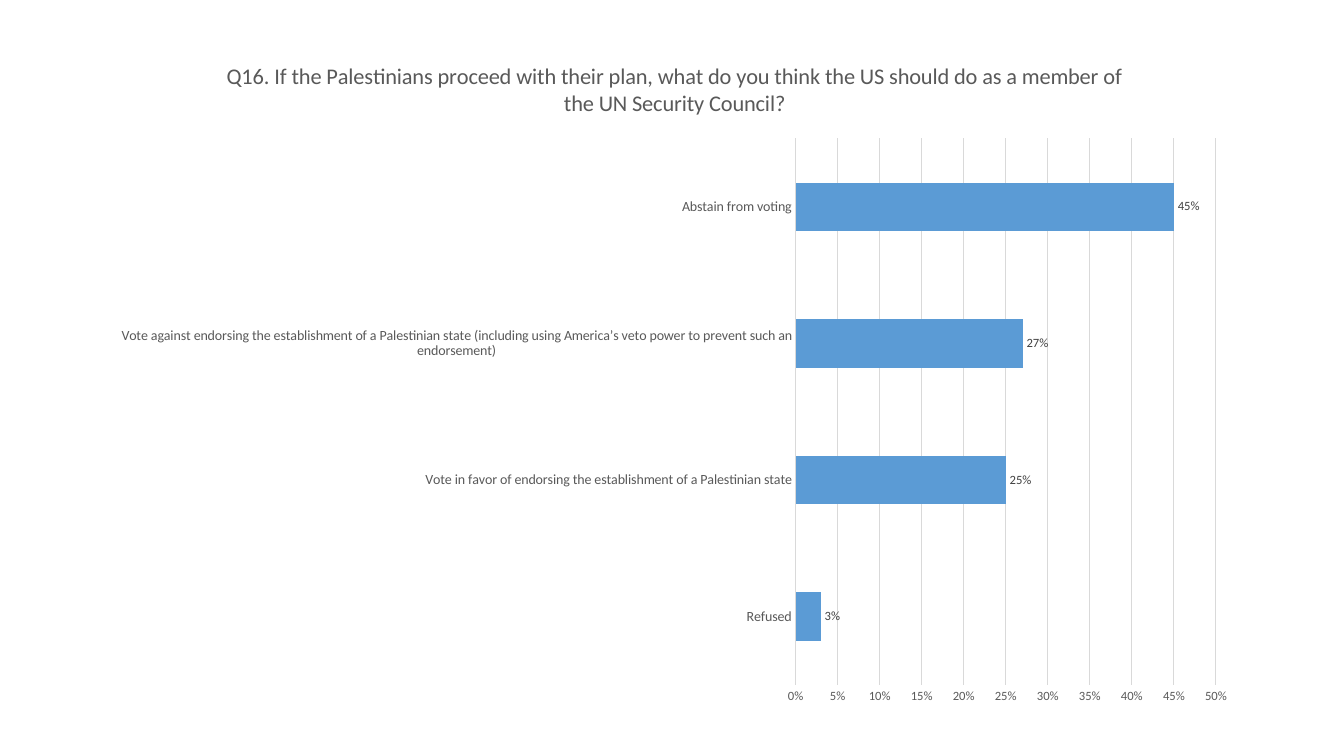
from dataclasses import dataclass

from lxml.etree import SubElement
from pptx import Presentation
from pptx.chart.data import CategoryChartData
from pptx.dml.color import RGBColor
from pptx.enum.chart import XL_CHART_TYPE, XL_LABEL_POSITION, XL_TICK_MARK
from pptx.oxml.ns import qn
from pptx.util import Inches, Pt


@dataclass(frozen=True)
class Theme:
    font: str = "Calibri"
    bar: str = "5B9BD5"
    text: str = "595959"
    label: str = "404040"
    rule: str = "D9D9D9"
    title_size: int = 16
    category_size: int = 10
    small_size: int = 9
    rule_width: float = 0.75


class SurveyPage:
    def __init__(self, deck, theme):
        self.deck = deck
        self.theme = theme
        self.page = deck.slides.add_slide(deck.slide_layouts[6])

    def style_font(self, font, size, color):
        font.name = self.theme.font
        font.size = Pt(size)
        font.bold = False
        font.color.rgb = RGBColor.from_string(color)

    def style_rule(self, line):
        line.color.rgb = RGBColor.from_string(self.theme.rule)
        line.width = Pt(self.theme.rule_width)

    def add_bar_chart(self, question, answers, left, top, width, height):
        data = CategoryChartData(number_format="0%")
        data.categories = list(answers)
        data.add_series("Series 1", answers.values())
        page_width, page_height = self.deck.slide_width, self.deck.slide_height
        frame = self.page.shapes.add_chart(
            XL_CHART_TYPE.BAR_CLUSTERED,
            int(left * page_width), int(top * page_height),
            int(width * page_width), int(height * page_height), data)
        chart = frame.chart
        chart.has_legend = False
        self.style_font(chart.font, self.theme.category_size, self.theme.text)
        self.add_title(chart, question)
        self.style_bars(chart.plots[0])
        self.style_axes(chart)
        return chart

    def add_title(self, chart, question):
        chart.has_title = True
        chart.chart_title.include_in_layout = False
        para = chart.chart_title.text_frame.paragraphs[0]
        para.text = question
        for span in para.runs:
            self.style_font(span.font, self.theme.title_size, self.theme.text)

    def style_bars(self, plot):
        plot.gap_width = 182
        plot.vary_by_categories = False
        fill = plot.series[0].format.fill
        fill.solid()
        fill.fore_color.rgb = RGBColor.from_string(self.theme.bar)
        plot.has_data_labels = True
        labels = plot.data_labels
        labels.show_value = True
        labels.number_format = "0%"
        labels.number_format_is_linked = False
        labels.position = XL_LABEL_POSITION.OUTSIDE_END
        self.style_font(labels.font, self.theme.small_size, self.theme.label)

    def style_axes(self, chart):
        sizes = self.theme.category_size, self.theme.small_size
        for axis, size in zip((chart.category_axis, chart.value_axis), sizes):
            axis.major_tick_mark = XL_TICK_MARK.NONE
            axis.minor_tick_mark = XL_TICK_MARK.NONE
            self.style_font(axis.tick_labels.font, size, self.theme.text)
        self.style_rule(chart.category_axis.format.line)
        scale = chart.value_axis
        scale.minimum_scale, scale.maximum_scale, scale.major_unit = 0, 0.5, 0.05
        scale.tick_labels.number_format = "0%"
        scale.tick_labels.number_format_is_linked = False
        scale.format.line.fill.background()
        scale.has_major_gridlines = True
        self.style_rule(scale.major_gridlines.format.line)

    def place_plot(self, chart, left, top, width, height):
        area = chart.plots[0]._element.getparent()
        layout = area.find(qn("c:layout"))
        if layout is None:
            layout = SubElement(area, qn("c:layout"))
            area.insert(0, layout)
        manual = SubElement(layout, qn("c:manualLayout"))
        settings = {"layoutTarget": "inner", "xMode": "edge", "yMode": "edge",
                    "x": left, "y": top, "w": width, "h": height}
        for name, value in settings.items():
            SubElement(manual, qn(f"c:{name}")).set("val", str(value))


def main():
    deck = Presentation()
    deck.slide_width, deck.slide_height = Inches(13.33), Inches(7.5)
    survey = SurveyPage(deck, Theme())
    answers = {
        "Refused": 0.03,
        "Vote in favor of endorsing the establishment of a Palestinian state": 0.25,
        "Vote against endorsing the establishment of a Palestinian state (including "
        "using America’s veto power to prevent such an endorsement)": 0.27,
        "Abstain from voting": 0.45,
    }
    chart = survey.add_bar_chart(
        "Q16. If the Palestinians proceed with their plan, what do you think the US "
        "should do as a member of the UN Security Council?",
        answers, left=0.0735, top=0.05, width=0.857, height=0.9)
    survey.place_plot(chart, left=0.605, top=0.148, width=0.365, height=0.803)
    deck.save("out.pptx")


if __name__ == "__main__":
    main()
